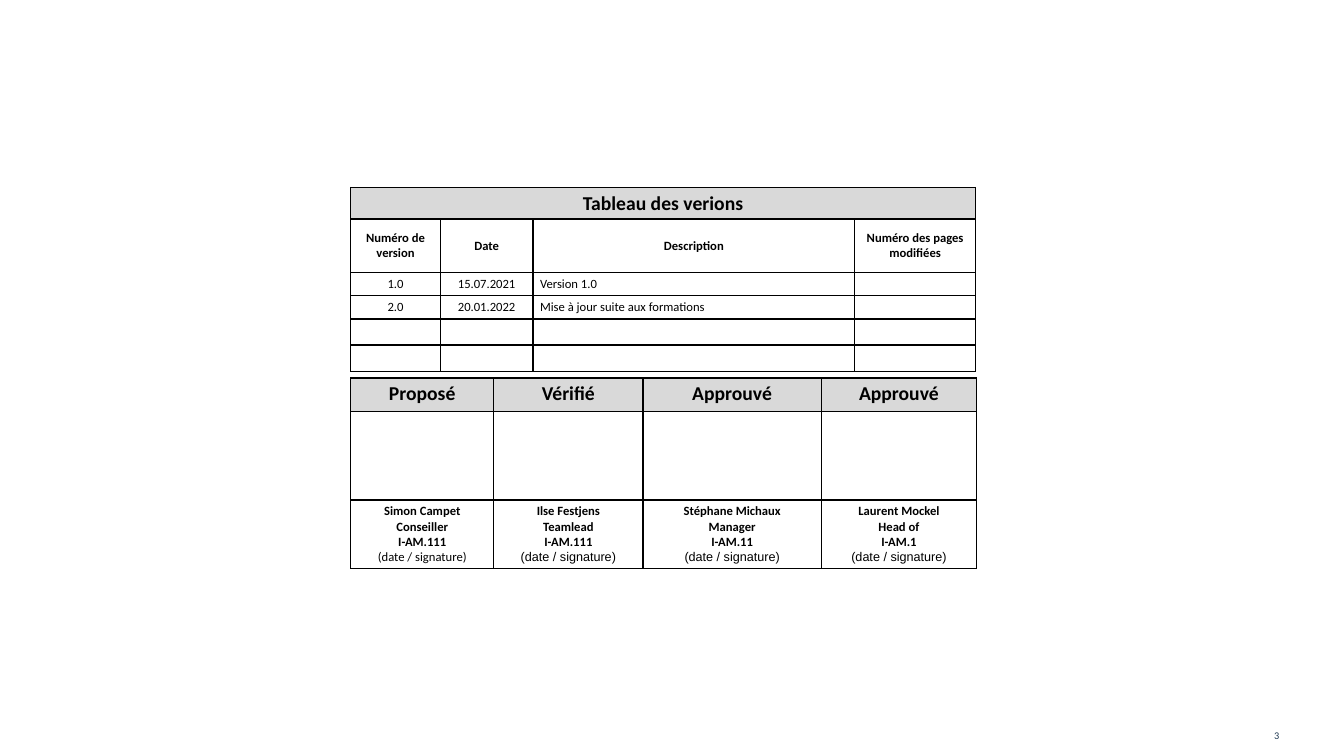
import pptx
import pptx.dml.color
import pptx.enum.text
import pptx.oxml
import pptx.oxml.ns
import pptx.util

Pt = pptx.util.Pt
CENTER = pptx.enum.text.PP_ALIGN.CENTER
LEFT = pptx.enum.text.PP_ALIGN.LEFT
MIDDLE = pptx.enum.text.MSO_ANCHOR.MIDDLE
TOP = pptx.enum.text.MSO_ANCHOR.TOP

BLACK = pptx.dml.color.RGBColor(0x00, 0x00, 0x00)
WHITE = pptx.dml.color.RGBColor(0xFF, 0xFF, 0xFF)
GREY = pptx.dml.color.RGBColor(0xD9, 0xD9, 0xD9)
NAVY = pptx.dml.color.RGBColor(0x21, 0x3A, 0x53)

TABLE_LEFT = 250.5
SIGN_HERE = "(date / signature)"

VERSION_ROWS = [
    ["Tableau des verions", "", "", ""],
    ["Numéro de version", "Date", "Description", "Numéro des pages modifiées"],
    ["1.0", "15.07.2021", "Version 1.0", ""],
    ["2.0", "20.01.2022", "Mise à jour suite aux formations", ""],
    [""] * 4,
    [""] * 4,
]
SIGNERS = [
    ("Proposé", ["Simon Campet", "Conseiller", "I-AM.111"], "Calibri"),
    ("Vérifié", ["Ilse Festjens", "Teamlead", "I-AM.111"], "Arial"),
    ("Approuvé", ["Stéphane Michaux", "Manager", "I-AM.11"], "Arial"),
    ("Approuvé", ["Laurent Mockel", "Head of", "I-AM.1"], "Arial"),
]


def style_para(para, size, bold=False, align=CENTER, name="Calibri", color=BLACK):
    para.alignment = align
    para.font.size = Pt(size)
    para.font.bold = bold
    para.font.name = name
    para.font.color.rgb = color


def add_borders(cell):
    properties = cell._tc.get_or_add_tcPr()
    for index, side in enumerate(("lnL", "lnR", "lnT", "lnB")):
        line = pptx.oxml.parse_xml(
            f'<a:{side} {pptx.oxml.ns.nsdecls("a")} w="{Pt(1)}">'
            f'<a:solidFill><a:srgbClr val="{BLACK}"/></a:solidFill></a:{side}>'
        )
        properties.insert(index, line)


def add_grid(page, top, widths, heights):
    frame = page.shapes.add_table(
        len(heights), len(widths),
        Pt(TABLE_LEFT), Pt(top), Pt(sum(widths)), Pt(sum(heights)),
    )
    table = frame.table
    table.first_row = False
    table.horz_banding = False
    for column, width in zip(table.columns, widths):
        column.width = Pt(width)
    for row, height in zip(table.rows, heights):
        row.height = Pt(height)
    return table


def fill_cell(cell, lines, size=9, bold=False, align=CENTER, anchor=TOP, fill=WHITE):
    cell.margin_left = cell.margin_right = Pt(5)
    cell.margin_top = cell.margin_bottom = Pt(2.7)
    cell.vertical_anchor = anchor
    cell.fill.solid()
    cell.fill.fore_color.rgb = fill
    add_borders(cell)
    cell.text_frame.text = "\n".join(lines)
    for para in cell.text_frame.paragraphs:
        style_para(para, size, bold, align)


def add_versions(page):
    table = add_grid(page, 134, [64, 66.3, 229.7, 86.4],
                     [21.6, 38.2, 16.6, 16.6, 18.7, 18.7])
    for row, texts in enumerate(VERSION_ROWS):
        for column, text in enumerate(texts):
            fill_cell(
                table.cell(row, column), [text],
                size=14 if row == 0 else 9,
                bold=row < 2,
                align=LEFT if row > 1 and column == 2 else CENTER,
                anchor=MIDDLE if row == 1 else TOP,
                fill=GREY if row == 0 else WHITE,
            )
    table.cell(0, 0).merge(table.cell(0, 3))


def add_approvals(page):
    table = add_grid(page, 270, [102.2, 106.6, 127.4, 110.9], [23.8, 63.4, 49])
    for column, (role, identity, sign_font) in enumerate(SIGNERS):
        fill_cell(table.cell(0, column), [role], size=14, bold=True, fill=GREY)
        fill_cell(table.cell(1, column), [""])
        signer = table.cell(2, column)
        fill_cell(signer, identity + [SIGN_HERE], bold=True)
        style_para(signer.text_frame.paragraphs[-1], 9, name=sign_font)


def add_page_number(page):
    box = page.shapes.add_textbox(Pt(903), Pt(511), Pt(44.6), Pt(28.8))
    box.text_frame.word_wrap = True
    box.text_frame.vertical_anchor = MIDDLE
    para = box.text_frame.paragraphs[0]
    para.text = "3"
    style_para(para, 7.3, align=LEFT, color=NAVY)


def main():
    deck = pptx.Presentation()
    deck.slide_width = Pt(960)
    deck.slide_height = Pt(540)
    page = deck.slides.add_slide(deck.slide_layouts[6])
    add_approvals(page)
    add_versions(page)
    add_page_number(page)
    deck.save("out.pptx")


if __name__ == "__main__":
    main()
